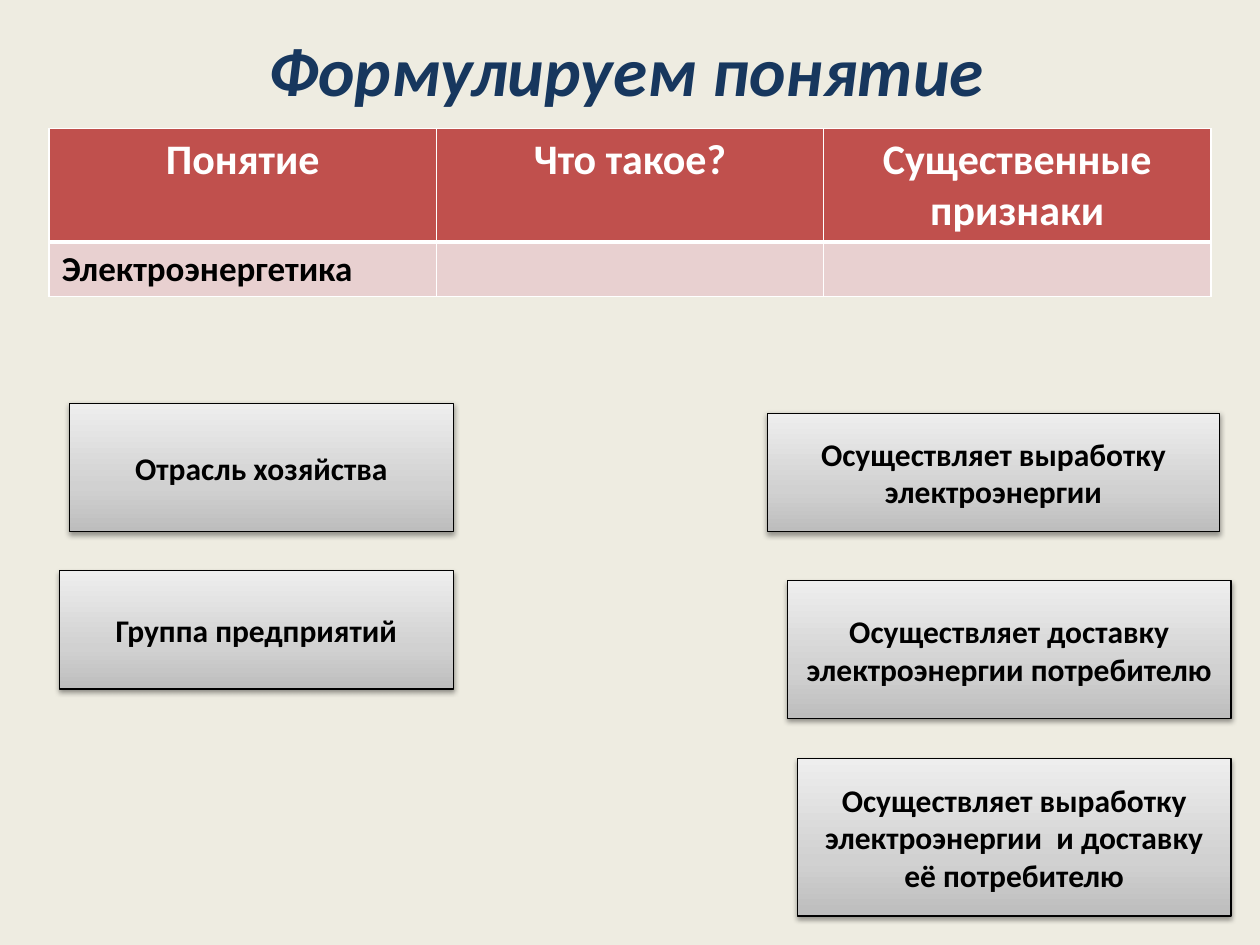
from lxml import etree
from pptx import Presentation
from pptx.dml.color import RGBColor
from pptx.enum import shapes, text
from pptx.oxml import ns
from pptx.util import Inches, Pt

TITLE = "Формулируем понятие"
TABLE_ROWS = [
    {"cells": ["Понятие", "Что такое?", "Существенные признаки"], "height": 0.9,
     "fill": "C0504D", "size": 24, "color": "FFFFFF",
     "align": text.PP_ALIGN.CENTER, "top": 1, "bottom": 3},
    {"cells": ["Электроэнергетика", "", ""], "height": 0.43,
     "fill": "E8D0D0", "size": 20, "color": "000000",
     "align": text.PP_ALIGN.LEFT, "top": 3, "bottom": 1},
]
CARDS = [
    ("Осуществляет выработку электроэнергии  и доставку её потребителю", 6.33, 6.02, 3.44, 1.25),
    ("Осуществляет доставку электроэнергии потребителю", 6.25, 4.61, 3.52, 1.09),
    ("Группа предприятий", 0.47, 4.53, 3.13, 0.94),
    ("Осуществляет выработку электроэнергии", 6.09, 3.28, 3.59, 0.94),
    ("Отрасль хозяйства", 0.55, 3.2, 3.05, 1.02),
]
CARD_GRADIENT = [(0, "BDBDBD"), (35, "D1D1D1"), (100, "EEEEEE")]
SHADOW = {"blurRad": Pt(3.1), "dist": Pt(1.6), "dir": 90 * 60000, "rotWithShape": 0}


def rgb(color):
    return RGBColor.from_string(color)


def add_node(parent, tag, **values):
    return etree.SubElement(parent, ns.qn(tag), {key: str(value) for key, value in values.items()})


def write(frame, words, size, color, align=text.PP_ALIGN.CENTER, **extra):
    paragraph = frame.paragraphs[0]
    paragraph.alignment = align
    run = paragraph.add_run()
    run.text = words
    run.font.color.rgb = rgb(color)
    for name, value in {"name": "Calibri", "size": Pt(size), "bold": True, **extra}.items():
        setattr(run.font, name, value)


def add_title(slide):
    frame = slide.shapes.add_textbox(*map(Inches, (0.47, 0.23, 9, 0.64))).text_frame
    frame.word_wrap = True
    frame.vertical_anchor = text.MSO_ANCHOR.MIDDLE
    write(frame, TITLE, 39.6, "17375E", italic=True)


def add_borders(cell, widths):
    properties = cell._tc.get_or_add_tcPr()
    for position, (side, width) in enumerate(widths.items()):
        border = add_node(properties, f"a:ln{side}", w=Pt(width))
        add_node(add_node(border, "a:solidFill"), "a:srgbClr", val="FFFFFF")
        properties.insert(position, border)


def add_concept_table(slide):
    column_count = len(TABLE_ROWS[0]["cells"])
    height = sum(row["height"] for row in TABLE_ROWS)
    table = slide.shapes.add_table(
        len(TABLE_ROWS), column_count, *map(Inches, (0.39, 1.02, 9.22, height))).table
    for row_index, row in enumerate(TABLE_ROWS):
        table.rows[row_index].height = Inches(row["height"])
        for column_index, words in enumerate(row["cells"]):
            cell = table.cell(row_index, column_index)
            cell.fill.solid()
            cell.fill.fore_color.rgb = rgb(row["fill"])
            add_borders(cell, {"L": 1, "R": 1, "T": row["top"], "B": row["bottom"]})
            if words:
                write(cell.text_frame, words, row["size"], row["color"], row["align"])


def add_card(slide, words, *box):
    card = slide.shapes.add_shape(shapes.MSO_SHAPE.RECTANGLE, *map(Inches, box))
    card.fill.gradient()
    card.fill.gradient_angle = 90
    properties = card._element.spPr
    stops = properties.find(".//" + ns.qn("a:gsLst"))
    for stop in list(stops):
        stops.remove(stop)
    for percent, color in CARD_GRADIENT:
        add_node(add_node(stops, "a:gs", pos=percent * 1000), "a:srgbClr", val=color)
    card.line.color.rgb = rgb("000000")
    card.line.width = Pt(0.75)
    card.shadow.inherit = False
    shadow = add_node(properties.find(ns.qn("a:effectLst")), "a:outerShdw", **SHADOW)
    add_node(add_node(shadow, "a:srgbClr", val="000000"), "a:alpha", val=38000)
    card.text_frame.word_wrap = True
    card.text_frame.vertical_anchor = text.MSO_ANCHOR.MIDDLE
    write(card.text_frame, words, 18, "000000")


def main():
    deck = Presentation()
    deck.slide_width, deck.slide_height = Inches(10), Inches(7.5)
    slide = deck.slides.add_slide(deck.slide_layouts[6])
    slide.background.fill.solid()
    slide.background.fill.fore_color.rgb = rgb("EEECE1")
    add_title(slide)
    add_concept_table(slide)
    for card in CARDS:
        add_card(slide, *card)
    deck.save("out.pptx")


if __name__ == "__main__":
    main()
